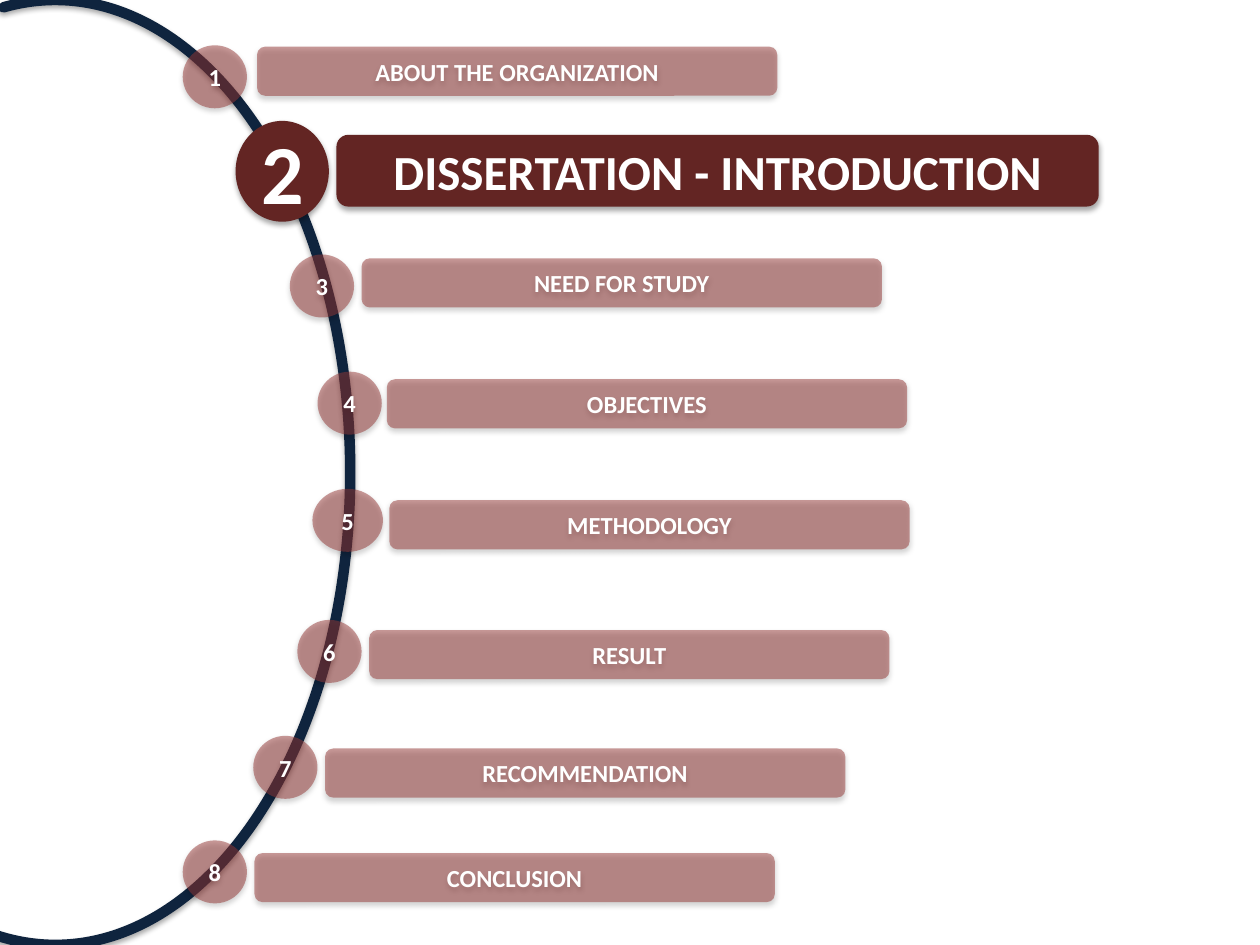
"""Build an agenda slide: eight numbered steps along an arc, the second one highlighted."""
import pptx
import pptx.dml.color
import pptx.enum.shapes
import pptx.enum.text
import pptx.oxml
import pptx.oxml.ns
import pptx.util

Inches = pptx.util.Inches
Pt = pptx.util.Pt
Kind = pptx.enum.shapes.MSO_SHAPE
qn = pptx.oxml.ns.qn
SHADOW = (
    f'<a:outerShdw {pptx.oxml.ns.nsdecls("a")} blurRad="{Pt(3.1)}" dist="{Pt(1.8)}" '
    'dir="5400000" rotWithShape="0"><a:srgbClr val="000000">'
    '<a:alpha val="35000"/></a:srgbClr></a:outerShdw>'
)


def rgb(code):
    return pptx.dml.color.RGBColor.from_string(code)


def add(kind, left, top, width, height):
    shape = slide.shapes.add_shape(
        kind, Inches(left), Inches(top), Inches(width), Inches(height))
    shape.shadow.inherit = False
    glow = shape._element.spPr.find(qn("a:effectLst"))
    glow.append(pptx.oxml.parse_xml(SHADOW))
    return shape


deck = pptx.Presentation()
deck.slide_width = Inches(10)
deck.slide_height = Inches(7.5)
slide = deck.slides.add_slide(deck.slide_layouts[6])

arc = add(Kind.BLOCK_ARC, -1.9, 0, 4.68, 7.5)
for spot, value in enumerate((158.17, 58.48, 0)):
    arc.adjustments[spot] = value
arc.fill.gradient()
arc.fill.gradient_angle = 90
for stop, code in zip(arc.fill.gradient_stops, ("3F80CE", "A4C4FF")):
    stop.color.rgb = rgb(code)
arc.line.color.rgb = rgb("0F243E")
arc.line.width = Pt(6)

steps = [
    ("ABOUT THE ORGANIZATION", (1.45, 0.36), (2.04, 0.37)),
    ("DISSERTATION - INTRODUCTION", (1.87, 0.96), (2.67, 1.07)),
    ("NEED FOR STUDY", (2.3, 2.02), (2.87, 2.05)),
    ("OBJECTIVES", (2.52, 2.95), (3.07, 3.01)),
    ("METHODOLOGY", (2.48, 3.88), (3.09, 3.97)),
    ("RESULT", (2.36, 4.92), (2.93, 5)),
    ("RECOMMENDATION", (2.01, 5.84), (2.58, 5.94)),
    ("CONCLUSION", (1.45, 6.67), (2.02, 6.77)),
]
active = 2
wide = 5

for number, (label, disc, bar) in enumerate(steps, 1):
    big = number == active
    if big:
        sizes = (0.74, 0.8), (6.05, 0.57)
    else:
        sizes = (0.56 if number == wide else 0.51, 0.5), (4.13, 0.39)
    parts = [
        (Kind.OVAL, disc, sizes[0], str(number), 48 if big else 14),
        (Kind.ROUNDED_RECTANGLE, bar, sizes[1], label, 28 if big else 14),
    ]
    for kind, place, size, text, points in parts:
        shape = add(kind, *place, *size)
        shape.fill.solid()
        shape.fill.fore_color.rgb = rgb("632523" if big else "953735")
        if not big:
            tint = shape._element.spPr.find(qn("a:solidFill"))[0]
            alpha = pptx.oxml.parse_xml(
                f'<a:alpha {pptx.oxml.ns.nsdecls("a")} val="50000"/>')
            tint.append(alpha)
        shape.line.fill.background()
        frame = shape.text_frame
        frame.text = text
        frame.vertical_anchor = pptx.enum.text.MSO_ANCHOR.MIDDLE
        para = frame.paragraphs[0]
        para.alignment = pptx.enum.text.PP_ALIGN.CENTER
        font = para.runs[0].font
        font.name = "Calibri"
        font.size = Pt(points)
        font.bold = True
        font.color.rgb = rgb("FFFFFF")

deck.save("out.pptx")
